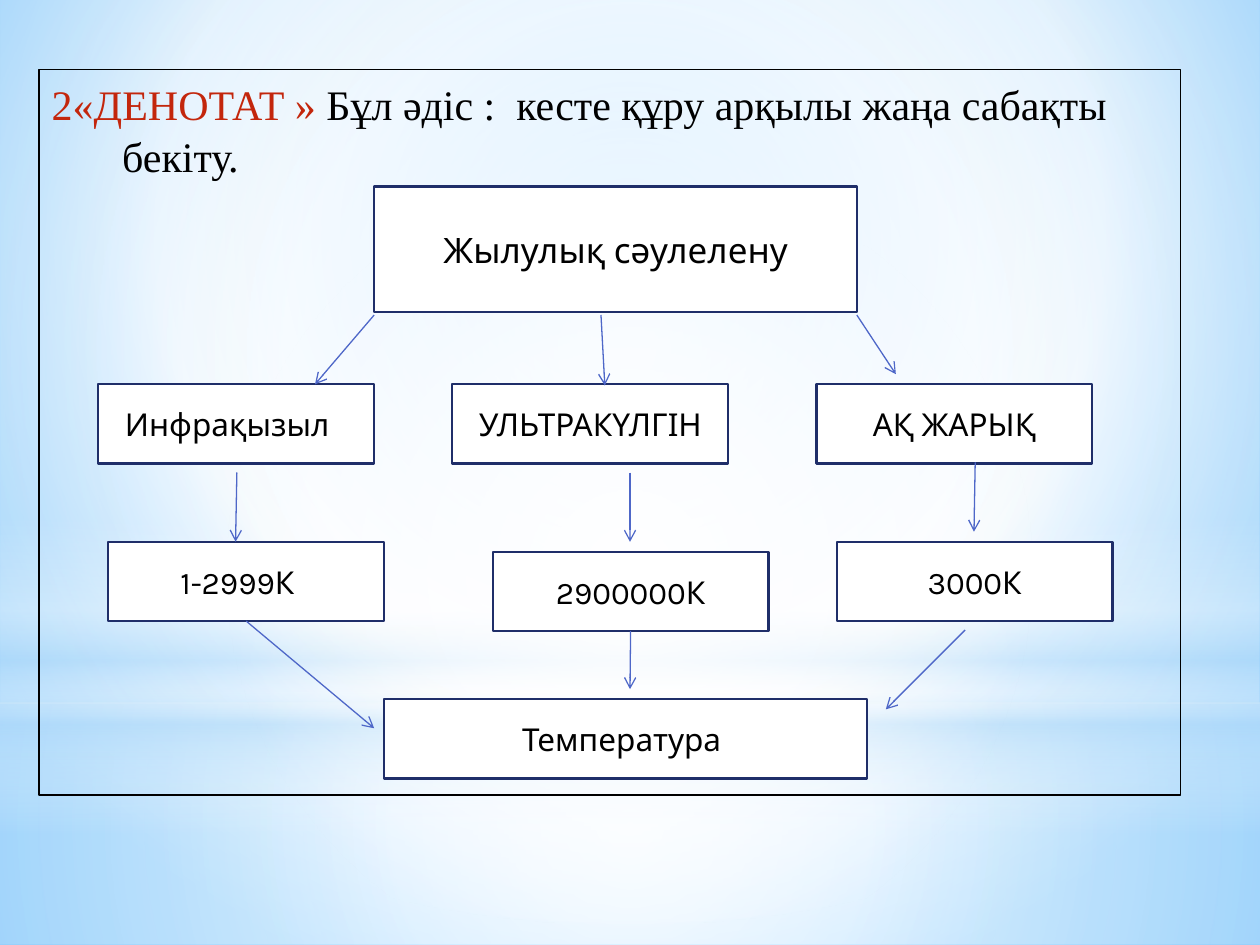
from lxml.etree import SubElement
from pptx import Presentation
from pptx.dml.color import RGBColor
from pptx.enum.shapes import MSO_CONNECTOR, MSO_SHAPE
from pptx.enum.text import MSO_ANCHOR, MSO_AUTO_SIZE, PP_ALIGN
from pptx.oxml.ns import qn
from pptx.util import Inches, Pt

COLORS = {
    "white": "FFFFFF",
    "black": "000000",
    "red": "C3260C",
    "navy": "1F2E69",
    "arrow": "4E67C8",
    "sky": "9ED5FF",
    "deep_sky": "5BB9FF",
    "mist": "B4DCFA",
}
CENTER = (50, 50, 50, 50)
BOTTOM = 2
NODE_WIDTH, NODE_HEIGHT, WIDE_WIDTH = 2.19, 0.63, 3.83


def color(name):
    return RGBColor.from_string(COLORS[name])


def paint_gradient(fill, element, stops, focus=None, angle=90):
    fill.gradient()
    gradient = element.find(".//" + qn("a:gradFill"))
    for child in list(gradient):
        gradient.remove(child)
    stop_list = SubElement(gradient, qn("a:gsLst"))
    for position, name, opacity in stops:
        stop = SubElement(stop_list, qn("a:gs"), pos=str(position * 1000))
        tint = SubElement(stop, qn("a:srgbClr"), val=COLORS[name])
        if opacity < 100:
            SubElement(tint, qn("a:alpha"), val=str(opacity * 1000))
    if focus:
        path = SubElement(gradient, qn("a:path"), path="circle")
        sides = {side: str(value * 1000) for side, value in zip("ltrb", focus)}
        SubElement(path, qn("a:fillToRect"), **sides)
    else:
        SubElement(gradient, qn("a:lin"), ang=str(angle * 60000), scaled="0")


def add_text(paragraph, text, size=18, font="Karla", fill="black"):
    run = paragraph.add_run()
    run.text = text
    run.font.size = Pt(size)
    run.font.name = font
    run.font.bold = False
    run.font.color.rgb = color(fill)


def add_glow(slide, kind, box, stops, focus=None):
    shape = slide.shapes.add_shape(kind, *map(Inches, box))
    shape.shadow.inherit = False
    shape.line.fill.background()
    paint_gradient(shape.fill, shape.element, stops, focus)


def add_backdrop(slide, width, height):
    paint_gradient(
        slide.background.fill, slide.element,
        [(0, "sky", 100), (60, "white", 100), (100, "deep_sky", 100)],
        (20, 10, 20, 60))
    horizon = 5.58
    add_glow(slide, MSO_SHAPE.RECTANGLE, (0, horizon, width, height - horizon),
             [(0, "white", 91), (37, "white", 76), (100, "mist", 79)], CENTER)
    add_glow(slide, MSO_SHAPE.RECTANGLE, (0, 0, width, horizon),
             [(0, "white", 89), (48, "white", 62), (100, "mist", 79)], CENTER)
    add_glow(slide, MSO_SHAPE.RECTANGLE, (0, 4.12, width, 2.5),
             [(0, "white", 0), (29, "white", 30), (45, "mist", 40),
              (55, "white", 26), (65, "mist", 60), (100, "white", 0)])
    add_glow(slide, MSO_SHAPE.OVAL, (0, 1.75, width, horizon),
             [(0, "white", 100), (56, "white", 0)], CENTER)


def add_title_frame(slide, left, top, width, height):
    title = slide.shapes.title
    title.left, title.top = Inches(left), Inches(top)
    title.width, title.height = Inches(width), Inches(height)
    title.line.color.rgb = color("black")
    title.line.width = Pt(0.75)
    frame = title.text_frame
    frame.word_wrap = True
    frame.auto_size = MSO_AUTO_SIZE.NONE
    frame.vertical_anchor = MSO_ANCHOR.TOP
    paragraph = frame.paragraphs[0]
    paragraph.alignment = PP_ALIGN.LEFT
    paragraph.line_spacing = 1.05
    properties = paragraph._p.get_or_add_pPr()
    properties.set("marL", str(Inches(0.56)))
    properties.set("indent", str(-Inches(0.56)))
    add_text(paragraph, "2«ДЕНОТАТ » ", size=24, font="Times New Roman", fill="red")
    add_text(paragraph, "Бұл әдіс :  кесте құру арқылы жаңа сабақты бекіту.",
             size=24, font="Times New Roman")
    title.element.getparent().append(title.element)


def add_node(slide, text, left, top, width=NODE_WIDTH, height=NODE_HEIGHT,
             size=18, shift=0):
    shape = slide.shapes.add_shape(
        MSO_SHAPE.RECTANGLE, *map(Inches, (left, top, width, height)))
    shape.shadow.inherit = False
    shape.fill.solid()
    shape.fill.fore_color.rgb = color("white")
    shape.line.color.rgb = color("navy")
    shape.line.width = Pt(1.25)
    frame = shape.text_frame
    frame.word_wrap = True
    frame.vertical_anchor = MSO_ANCHOR.MIDDLE
    frame.margin_right = Inches(0.1 + 2 * shift)
    paragraph = frame.paragraphs[0]
    paragraph.alignment = PP_ALIGN.CENTER
    add_text(paragraph, text, size=size)
    return shape


def add_arrow(slide, start, end, source=None):
    arrow = slide.shapes.add_connector(
        MSO_CONNECTOR.STRAIGHT, *map(Inches, (*start, *end)))
    if source is not None:
        arrow.begin_connect(source, BOTTOM)
    arrow.line.color.rgb = color("arrow")
    arrow.line.width = Pt(0.75)
    SubElement(arrow.line._get_or_add_ln(), qn("a:tailEnd"), type="arrow")
    SubElement(arrow.element.spPr, qn("a:effectLst"))


def add_diagram(slide, left, top):
    def at(x, y):
        return left + x, top + y

    add_node(slide, "Жылулық сәулелену", *at(2.19, 0), WIDE_WIDTH, 1, size=20)
    for text, x, shift in [("Инфрақызыл", 0, 0.07), ("УЛЬТРАКҮЛГІН", 2.81, 0),
                           ("АҚ ЖАРЫҚ", 5.7, 0)]:
        add_node(slide, text, *at(x, 1.57), shift=shift)
    infrared = add_node(slide, "1-2999К", *at(0.08, 2.82), shift=0.07)
    ultraviolet = add_node(slide, "2900000К", *at(3.13, 2.9))
    add_node(slide, "3000К", *at(5.86, 2.82))
    add_node(slide, "Температура", *at(2.27, 4.07), WIDE_WIDTH, shift=0.03)

    for start, end, source in [
        ((2.19, 1.02), (1.72, 1.57), None),
        ((3.99, 1.02), (4.02, 1.58), None),
        ((6.02, 1.02), (6.33, 1.49), None),
        ((1.1, 2.27), (1.09, 2.82), None),
        ((4.22, 2.27), (4.22, 2.82), None),
        ((6.96, 2.19), (6.95, 2.74), None),
        ((1.17, 3.45), (2.19, 4.3), infrared),
        ((4.22, 3.53), (4.22, 3.99), ultraviolet),
        ((6.88, 3.52), (6.25, 4.15), None),
    ]:
        add_arrow(slide, at(*start), at(*end), source)


def main():
    width, height = 10, 7.5
    presentation = Presentation()
    presentation.slide_width = Inches(width)
    presentation.slide_height = Inches(height)
    slide = presentation.slides.add_slide(presentation.slide_layouts[5])
    add_backdrop(slide, width, height)
    add_title_frame(slide, 0.31, 0.55, 9.06, 5.76)
    add_diagram(slide, 0.78, 1.48)
    presentation.save("out.pptx")


if __name__ == "__main__":
    main()
